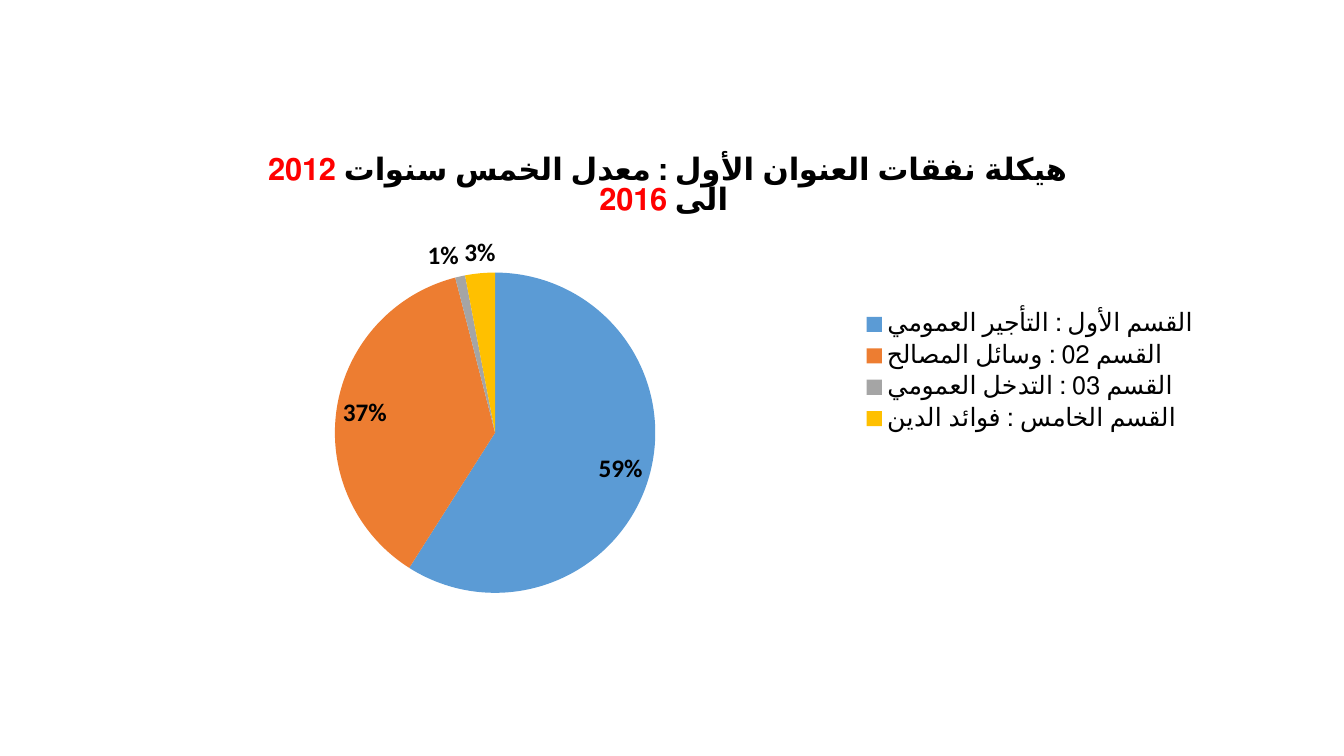
from dataclasses import dataclass

from lxml.etree import SubElement
from pptx import Presentation
from pptx.chart.data import CategoryChartData
from pptx.dml.color import RGBColor
from pptx.enum.chart import XL_CHART_TYPE as ChartType
from pptx.enum.chart import XL_LABEL_POSITION as LabelPosition
from pptx.enum.chart import XL_LEGEND_POSITION as LegendPosition
from pptx.oxml.ns import qn
from pptx.util import Inches, Pt


@dataclass(frozen=True)
class Theme:
    font: str = "Calibri"
    text: str = "000000"
    accent: str = "FF0000"
    slices: tuple = ("5B9BD5", "ED7D31", "A5A5A5", "FFC000")
    title_size: int = 22
    body_size: int = 18


# Content
HEADING = (
    ("هيكلة نفقات العنوان الأول : معدل الخمس سنوات ", False),
    ("2012", True),
    (" الى ", False),
    ("2016 ", True),
)
EXPENSES = {
    "القسم الأول : التأجير العمومي": 59,
    "القسم 02 : وسائل المصالح": 37,
    "القسم 03 : التدخل العمومي": 1,
    "القسم الخامس : فوائد الدين": 3,
}


class SlideBuilder:
    def __init__(self, deck, theme):
        self.deck, self.theme = deck, theme
        self.slide = deck.slides.add_slide(deck.slide_layouts[6])

    def style(self, font, size, bold=False, color=None):
        font.name, font.size, font.bold = self.theme.font, Pt(size), bold
        font.color.rgb = RGBColor.from_string(color or self.theme.text)

    def pie(self, name, values, left, top, width, height):
        """Add a pie; the box is given in shares of the slide."""
        data = CategoryChartData(number_format="0")
        data.categories = list(values)
        data.add_series(name, list(values.values()))
        wide, high = self.deck.slide_width, self.deck.slide_height
        chart = self.slide.shapes.add_chart(
            ChartType.PIE, int(left * wide), int(top * high),
            int(width * wide), int(height * high), data).chart
        self.style(chart.font, self.theme.body_size)
        chart.plots[0].vary_by_categories = True
        for index, color in enumerate(self.theme.slices):
            fill = chart.series[0].points[index].format.fill
            fill.solid()
            fill.fore_color.rgb = RGBColor.from_string(color)
        return chart

    def heading(self, chart, parts):
        chart.has_title = True
        chart.chart_title.include_in_layout = False
        paragraph = chart.chart_title.text_frame.paragraphs[0]
        self.style(paragraph.font, self.theme.title_size, bold=True)
        paragraph._p.get_or_add_pPr().set("rtl", "1")
        for text, highlighted in parts:
            run = paragraph.add_run()
            run.text = text
            color = self.theme.accent if highlighted else self.theme.text
            self.style(run.font, self.theme.title_size, True, color)

    def percentages(self, chart):
        plot = chart.plots[0]
        plot.has_data_labels = True
        labels = plot.data_labels
        labels.show_percentage, labels.show_value = True, False
        labels.number_format, labels.number_format_is_linked = "0%", False
        labels.position = LabelPosition.BEST_FIT
        self.style(labels.font, self.theme.body_size, bold=True)

    def legend(self, chart):
        chart.has_legend = True
        chart.legend.position = LegendPosition.RIGHT
        chart.legend.include_in_layout = False
        self.style(chart.legend.font, self.theme.body_size)

    def place(self, part, inner=False, **box):
        """Fix a chart part at shares of the chart's box."""
        layout = part.find(qn("c:layout"))
        if layout is None:
            layout = SubElement(part, qn("c:layout"))
            part.remove(layout)
            part.insert(1 if part.tag == qn("c:legend") else 0, layout)
        manual = SubElement(layout, qn("c:manualLayout"))
        if inner:
            SubElement(manual, qn("c:layoutTarget")).set("val", "inner")
        for mode in ("xMode", "yMode"):
            SubElement(manual, qn(f"c:{mode}")).set("val", "edge")
        for side, share in box.items():
            SubElement(manual, qn(f"c:{side}")).set("val", str(share))


def main():
    deck = Presentation()
    deck.slide_width, deck.slide_height = Inches(13.33), Inches(7.5)
    builder = SlideBuilder(deck, Theme())

    # Pie of expenses by section
    name = "".join(text for text, _ in HEADING)
    expenses = builder.pie(name, EXPENSES, 0.095, 0.18, 0.804, 0.623)
    builder.heading(expenses, HEADING)
    builder.percentages(expenses)
    builder.legend(expenses)

    # Places of the pie and its legend
    plot_area = expenses._chartSpace.chart.plotArea
    builder.place(plot_area, inner=True, x=0.19, y=0.29, w=0.3, h=0.68)
    builder.place(expenses.legend._element, x=0.68, y=0.36, w=0.31, h=0.28)

    deck.save("out.pptx")


if __name__ == "__main__":
    main()
